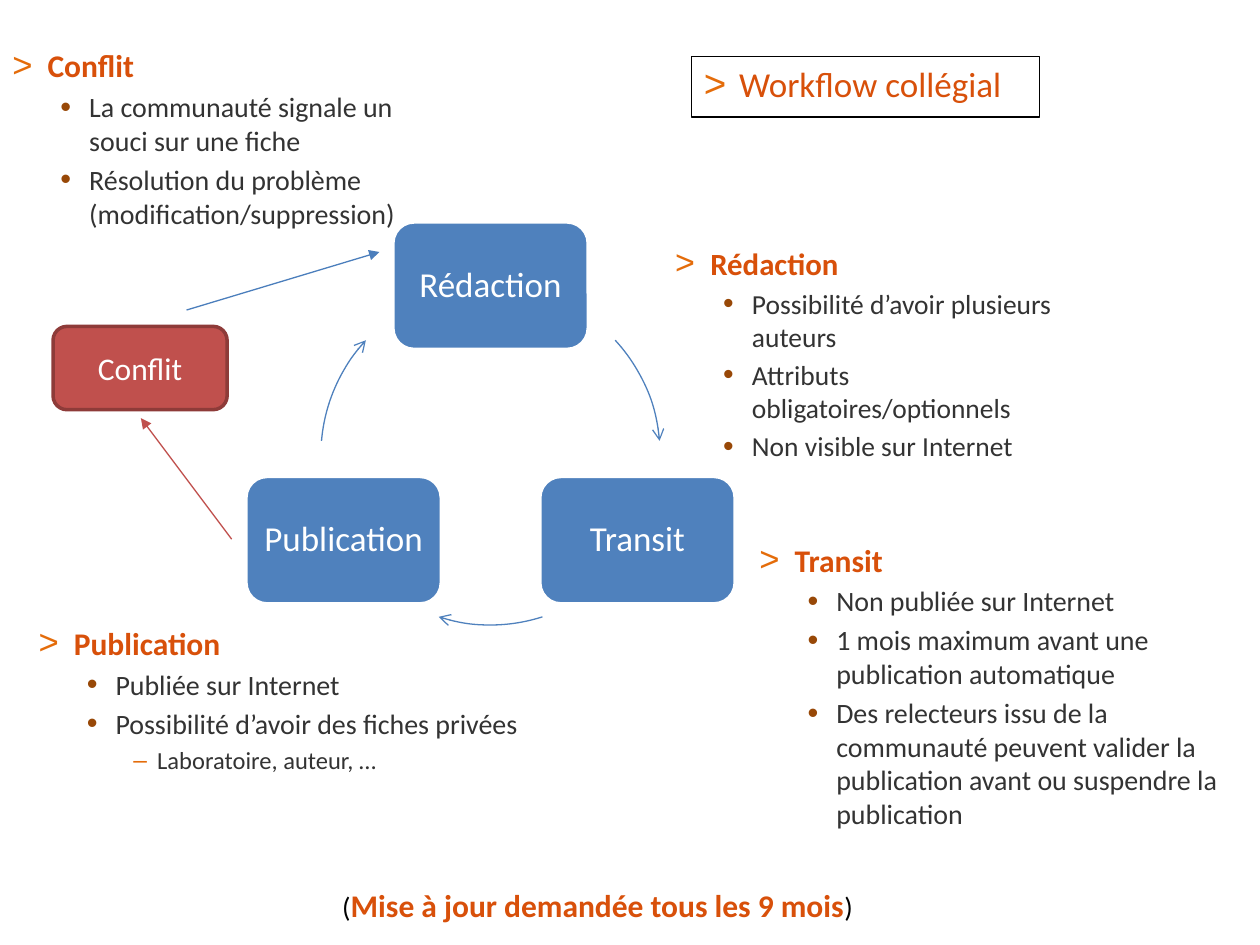
import math

import pptx
import pptx.dml.color
import pptx.enum.shapes
import pptx.enum.text
import pptx.oxml.ns
import pptx.util
from lxml import etree

Cm = pptx.util.Cm
Pt = pptx.util.Pt
RGBColor = pptx.dml.color.RGBColor
MSO_SHAPE = pptx.enum.shapes.MSO_SHAPE
PP_ALIGN = pptx.enum.text.PP_ALIGN
MSO_ANCHOR = pptx.enum.text.MSO_ANCHOR
qn = pptx.oxml.ns.qn

FONT = "Calibri"
BLUE = RGBColor(0x4F, 0x81, 0xBD)
LINK_BLUE = RGBColor(0x4B, 0x7E, 0xBC)
RED = RGBColor(0xC0, 0x50, 0x4D)
DARK_RED = RGBColor(0x8E, 0x3B, 0x39)
ORANGE = RGBColor(0xD8, 0x50, 0x0A)
BULLET_ORANGE = RGBColor(0xE4, 0x6C, 0x0A)
BROWN = RGBColor(0x98, 0x48, 0x07)
GREY = RGBColor(0x33, 0x33, 0x33)
BLACK = RGBColor(0, 0, 0)
WHITE = RGBColor(0xFF, 0xFF, 0xFF)

# Content: workflow steps with their angle on the circle, in degrees clockwise from east
STEPS = [("Rédaction", -90), ("Transit", 30), ("Publication", 150)]
ARROW_ARCS = [(317.3, 355.1), (72.2, 107.8), (184.9, 222.7)]
CENTER_X, CENTER_Y, RADIUS = 9.89, 9.18, 3.42
STEP_WIDTH, STEP_HEIGHT = 3.94, 2.57

# Start, end, colour
CONFLICT_ARROWS = [
    ((4.67, 10.87), (2.84, 8.43), RED),
    ((3.76, 6.25), (7.65, 5.08), LINK_BLUE),
]

# Box, text sizes by level, spacing of the heading, lines as (level, text)
NOTES = [
    ((15.06, 10.92, 10.34, 6.25), (18, 16), 0.8, [
        (0, "Transit"),
        (1, "Non publiée sur Internet"),
        (1, "1 mois maximum avant une publication automatique"),
        (1, "Des relecteurs issu de la communauté peuvent valider la "
            "publication avant ou suspendre la publication")]),
    ((0, 0.81, 9.02, 4.27), (18, 16), None, [
        (0, "Conflit"),
        (1, "La communauté signale un souci sur une fiche"),
        (1, "Résolution du problème (modification/suppression)")]),
    ((0.53, 12.45, 10.36, 3.4), (18, 16, 14), None, [
        (0, "Publication"),
        (1, "Publiée sur Internet"),
        (1, "Possibilité d’avoir des fiches privées"),
        (2, "Laboratoire, auteur, …")]),
    ((13.36, 4.8, 8.71, 4.29), (17.6, 15.7), None, [
        (0, "Rédaction"),
        (1, "Possibilité d’avoir plusieurs auteurs"),
        (1, "Attributs obligatoires/optionnels"),
        (1, "Non visible sur Internet")]),
]
TITLE = "Workflow collégial"
FOOTER = [("(", 16, BLACK, False),
          ("Mise à jour demandée tous les 9 mois", 18, ORANGE, True),
          (")", 16, BLACK, False)]

# By level: left margin, indent, bullet, bullet colour, bullet size in percent, text colour
LEVELS = [
    (0.71, -0.71, ">", BULLET_ORANGE, 110, ORANGE),
    (1.55, -0.58, "•", BROWN, 110, GREY),
    (2.39, -0.48, "‒", BULLET_ORANGE, 100, GREY),
]


def add_run(paragraph, text, size, color, bold=False):
    run = paragraph.add_run()
    run.text = text
    run.font.name = FONT
    run.font.size = Pt(size)
    run.font.bold = bold
    run.font.color.rgb = color


def add_arrowhead(shape, kind):
    line = shape.line._get_or_add_ln()
    etree.SubElement(line, qn("a:tailEnd"), type=kind)


def add_box(shapes, kind, box, fill, line_color, line_width):
    shape = shapes.add_shape(kind, *map(Cm, box))
    shape.shadow.inherit = False
    if fill is None:
        shape.fill.background()
    else:
        shape.fill.solid()
        shape.fill.fore_color.rgb = fill
    shape.line.color.rgb = line_color
    shape.line.width = Pt(line_width)
    return shape


def add_label(shape, text, size, spacing=None):
    shape.text_frame.word_wrap = True
    shape.text_frame.vertical_anchor = MSO_ANCHOR.MIDDLE
    paragraph = shape.text_frame.paragraphs[0]
    paragraph.alignment = PP_ALIGN.CENTER
    paragraph.line_spacing = spacing
    add_run(paragraph, text, size, WHITE)


def set_bullet(paragraph, level):
    margin, indent, character, color, percent, _ = LEVELS[level]
    properties = paragraph._p.get_or_add_pPr()
    properties.set("marL", str(Cm(margin)))
    properties.set("indent", str(Cm(indent)))
    bullet_color = etree.SubElement(properties, qn("a:buClr"))
    etree.SubElement(bullet_color, qn("a:srgbClr"), val=str(color))
    etree.SubElement(properties, qn("a:buSzPct"), val=str(percent * 1000))
    etree.SubElement(properties, qn("a:buFont"), typeface="Arial")
    etree.SubElement(properties, qn("a:buChar"), char=character)


def fill_list(text_frame, lines, sizes, bold_heading=True):
    text_frame.word_wrap = True
    text_frame.vertical_anchor = MSO_ANCHOR.TOP
    for index, (level, text) in enumerate(lines):
        paragraph = text_frame.add_paragraph() if index else text_frame.paragraphs[0]
        paragraph.level = level
        paragraph.alignment = PP_ALIGN.LEFT
        set_bullet(paragraph, level)
        if index:
            paragraph.space_before = Pt(round(0.2 * sizes[level], 1))
        add_run(paragraph, text, sizes[level], LEVELS[level][-1],
                bold_heading and level == 0)


def main():
    presentation = pptx.Presentation()
    presentation.slide_width = Cm(25.4)
    presentation.slide_height = Cm(19.05)
    slide = presentation.slides.add_slide(presentation.slide_layouts[6])
    shapes = slide.shapes

    # Cycle of steps, each followed by a curved arrow
    circle = (CENTER_X - RADIUS, CENTER_Y - RADIUS, 2 * RADIUS, 2 * RADIUS)
    for (name, angle), arc_angles in zip(STEPS, ARROW_ARCS):
        left = CENTER_X + RADIUS * math.cos(math.radians(angle)) - STEP_WIDTH / 2
        top = CENTER_Y + RADIUS * math.sin(math.radians(angle)) - STEP_HEIGHT / 2
        step = add_box(shapes, MSO_SHAPE.ROUNDED_RECTANGLE,
                       (left, top, STEP_WIDTH, STEP_HEIGHT), BLUE, WHITE, 2)
        step.text_frame.margin_left = step.text_frame.margin_right = Cm(0.2)
        add_label(step, name, 20, 0.9)

        arc = add_box(shapes, MSO_SHAPE.ARC, circle, None, BLUE, 0.75)
        for index, degrees in enumerate(arc_angles):
            arc.adjustments[index] = degrees * 0.6
        add_arrowhead(arc, "arrow")

    # Conflict step and its arrows
    conflict = add_box(shapes, MSO_SHAPE.ROUNDED_RECTANGLE,
                       (1.07, 6.58, 3.51, 1.68), RED, DARK_RED, 2)
    add_label(conflict, "Conflit", 18)
    for start, end, color in CONFLICT_ARROWS:
        connector = shapes.add_connector(
            pptx.enum.shapes.MSO_CONNECTOR.STRAIGHT, *map(Cm, start + end))
        connector.line.color.rgb = color
        connector.line.width = Pt(0.75)
        add_arrowhead(connector, "triangle")
        etree.SubElement(connector._element.spPr, qn("a:effectLst"))

    # Notes on each step
    for box, sizes, heading_spacing, lines in NOTES:
        text_frame = shapes.add_textbox(*map(Cm, box)).text_frame
        fill_list(text_frame, lines, sizes)
        text_frame.paragraphs[0].line_spacing = heading_spacing

    # Framed title
    title = add_box(shapes, MSO_SHAPE.RECTANGLE, (13.94, 1.14, 7.01, 1.22),
                    None, BLACK, 0.75)
    fill_list(title.text_frame, [(0, TITLE)], (20,), bold_heading=False)

    # Footer
    footer = shapes.add_textbox(Cm(6.65), Cm(17.73), Cm(10.9), Cm(1.02)).text_frame
    footer.word_wrap = False
    for text, size, color, bold in FOOTER:
        add_run(footer.paragraphs[0], text, size, color, bold)

    presentation.save("out.pptx")


if __name__ == "__main__":
    main()
